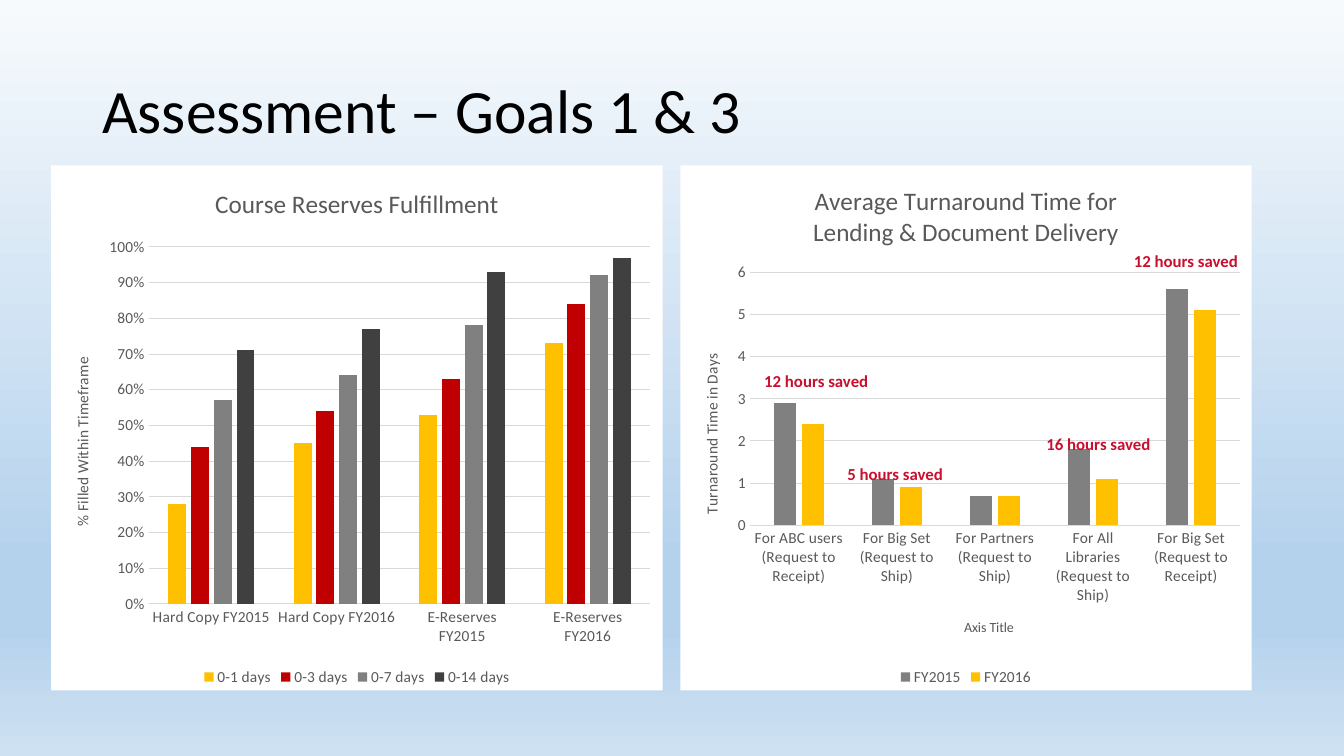
from copy import deepcopy
from dataclasses import dataclass
from typing import Any

from pptx import Presentation
from pptx import util as u
from pptx.chart.data import CategoryChartData
from pptx.dml.color import RGBColor
from pptx.enum import chart as ch
from pptx.enum import text
from pptx.oxml import parse_xml
from pptx.oxml.ns import nsdecls, qn

COLUMNS, ROWS = 160, 90
CELL = u.Inches(1) / 12
FACE = "Calibri"
GREY_TEXT, RULE, WHITE, BLACK = "595959", "D9D9D9", "FFFFFF", "000000"
GOLD, RED, GREY, CHARCOAL, SAVED = "FFC000", "C00000", "808080", "404040", "C8102E"
SKY = [(0, "F7FAFD"), (0.74, "B5D2EC"), (0.83, "B5D2EC"), (1, "CEE1F2")]


@dataclass(frozen=True)
class Area:
    column: float
    row: float
    columns: float
    rows: float

    def emu(self) -> list[int]:
        return [round(side * CELL) for side in (self.column, self.row, self.columns, self.rows)]


@dataclass(frozen=True)
class Caption:
    wording: str
    area: Area
    style: dict[str, Any]
    spacing: float = 1.0
    anchor: Any = text.MSO_ANCHOR.TOP


@dataclass(frozen=True)
class Measure:
    name: str
    color: str
    values: tuple[float, ...]


@dataclass(frozen=True)
class Panel:
    title: str
    area: Area
    value_title: str
    category_title: str
    categories: tuple[str, ...]
    measures: tuple[Measure, ...]
    top: float
    step: float
    number_format: str


def rgb(value: str) -> RGBColor:
    return RGBColor.from_string(value)


def assign(target: Any, values: dict[str, Any]) -> None:
    for name, value in values.items():
        setattr(target, name, value)


def style_font(font: Any, size: float, color: str, bold: bool = False) -> None:
    assign(font, {"name": FACE, "size": u.Pt(size), "bold": bold})
    font.color.rgb = rgb(color)


def paint_sky(slide: Any) -> None:
    fill = slide.background.fill
    fill.gradient()
    fill.gradient_angle = 270
    stops = next(slide.element.iter(qn("a:gsLst")))
    while len(stops) < len(SKY):
        stops.append(deepcopy(stops[-1]))
    for stop, (position, color) in zip(fill.gradient_stops, SKY):
        stop.position = position
        stop.color.rgb = rgb(color)


def write_caption(slide: Any, caption: Caption) -> None:
    frame = slide.shapes.add_textbox(*caption.area.emu()).text_frame
    assign(frame, {"word_wrap": True, "vertical_anchor": caption.anchor})
    paragraph = frame.paragraphs[0]
    paragraph.line_spacing = caption.spacing
    run = paragraph.add_run()
    run.text = caption.wording
    style_font(run.font, **caption.style)


def write_heading(owner: Any, wording: str, size: float) -> None:
    frame = owner.text_frame
    frame.text = wording
    for paragraph in frame.paragraphs:
        style_font(paragraph.font, size, GREY_TEXT)
        for run in paragraph.runs:
            style_font(run.font, size, GREY_TEXT)


def style_axes(chart: Any, panel: Panel) -> None:
    for axis, title, size in ((chart.category_axis, panel.category_title, 10),
                              (chart.value_axis, panel.value_title, 11)):
        assign(axis, {"major_tick_mark": ch.XL_TICK_MARK.NONE,
                      "minor_tick_mark": ch.XL_TICK_MARK.NONE,
                      "has_title": bool(title)})
        style_font(axis.tick_labels.font, 11, GREY_TEXT)
        if title:
            write_heading(axis.axis_title, title, size)
    values = chart.value_axis
    assign(values, {"minimum_scale": 0, "maximum_scale": panel.top,
                    "major_unit": panel.step, "has_major_gridlines": True})
    assign(values.tick_labels, {"number_format": panel.number_format,
                                "number_format_is_linked": False})
    values.format.line.fill.background()
    for line in (chart.category_axis.format.line, values.major_gridlines.format.line):
        line.width = u.Pt(0.75)
        line.color.rgb = rgb(RULE)


def draw_panel(slide: Any, panel: Panel) -> None:
    data = CategoryChartData()
    data.categories = panel.categories
    for measure in panel.measures:
        data.add_series(measure.name, measure.values)
    chart = slide.shapes.add_chart(
        ch.XL_CHART_TYPE.COLUMN_CLUSTERED, *panel.area.emu(), data).chart
    style_font(chart.font, 10, BLACK)
    chart._chartSpace.find(qn("c:chart")).addnext(parse_xml(
        f'<c:spPr {nsdecls("c", "a")}><a:solidFill><a:srgbClr val="{WHITE}"/>'
        '</a:solidFill><a:ln><a:noFill/></a:ln></c:spPr>'))
    assign(chart, {"has_title": True, "has_legend": True})
    write_heading(chart.chart_title, panel.title, 18)
    assign(chart.legend, {"position": ch.XL_LEGEND_POSITION.BOTTOM,
                          "include_in_layout": False})
    style_font(chart.legend.font, 11, GREY_TEXT)
    assign(chart.plots[0], {"gap_width": 219, "overlap": -27, "vary_by_categories": False})
    for series, measure in zip(chart.plots[0].series, panel.measures):
        series.invert_if_negative = False
        series.format.fill.solid()
        series.format.fill.fore_color.rgb = rgb(measure.color)
    style_axes(chart, panel)


TURNAROUND = Panel(
    "Average Turnaround Time for\nLending & Document Delivery",
    Area(81, 19.7, 68, 62.5), "Turnaround Time in Days", "Axis Title",
    ("For ABC users (Request to Receipt)", "For Big Set (Request to Ship)",
     "For Partners (Request to Ship)", "For All Libraries (Request to Ship)",
     "For Big Set (Request to Receipt)"),
    (Measure("FY2015", GREY, (2.9, 1.1, 0.7, 1.8, 5.6)),
     Measure("FY2016", GOLD, (2.4, 0.9, 0.7, 1.1, 5.1))),
    6, 1, "General")

RESERVES = Panel(
    "Course Reserves Fulfillment",
    Area(6.1, 19.7, 72.8, 62.5), "% Filled Within Timeframe", "",
    ("Hard Copy FY2015", "Hard Copy FY2016", "E-Reserves FY2015", "E-Reserves FY2016"),
    (Measure("0-1 days", GOLD, (0.28, 0.45, 0.53, 0.73)),
     Measure("0-3 days", RED, (0.44, 0.54, 0.63, 0.84)),
     Measure("0-7 days", GREY, (0.57, 0.64, 0.78, 0.92)),
     Measure("0-14 days", CHARCOAL, (0.71, 0.77, 0.93, 0.97))),
    1, 0.1, "0%")

HEADLINE = Caption("Assessment – Goals 1 & 3", Area(11, 4.8, 138, 17.4),
                   {"size": 44, "color": BLACK}, 0.9, text.MSO_ANCHOR.MIDDLE)
SAVINGS = [Caption(f"{hours} hours saved", Area(column, row, 15.24, 3.6),
                   {"size": 12, "color": SAVED, "bold": True})
           for hours, column, row in ((5, 99.7, 54.6), (12, 133.8, 29.3),
                                      (16, 123.4, 51), (12, 89.8, 43.6))]


def main() -> None:
    deck = Presentation()
    assign(deck, {"slide_width": round(COLUMNS * CELL), "slide_height": round(ROWS * CELL)})
    slide = deck.slides.add_slide(deck.slide_layouts[6])
    paint_sky(slide)
    draw_panel(slide, TURNAROUND)
    for caption in (HEADLINE, *SAVINGS):
        write_caption(slide, caption)
    draw_panel(slide, RESERVES)
    deck.save("out.pptx")


if __name__ == "__main__":
    main()
